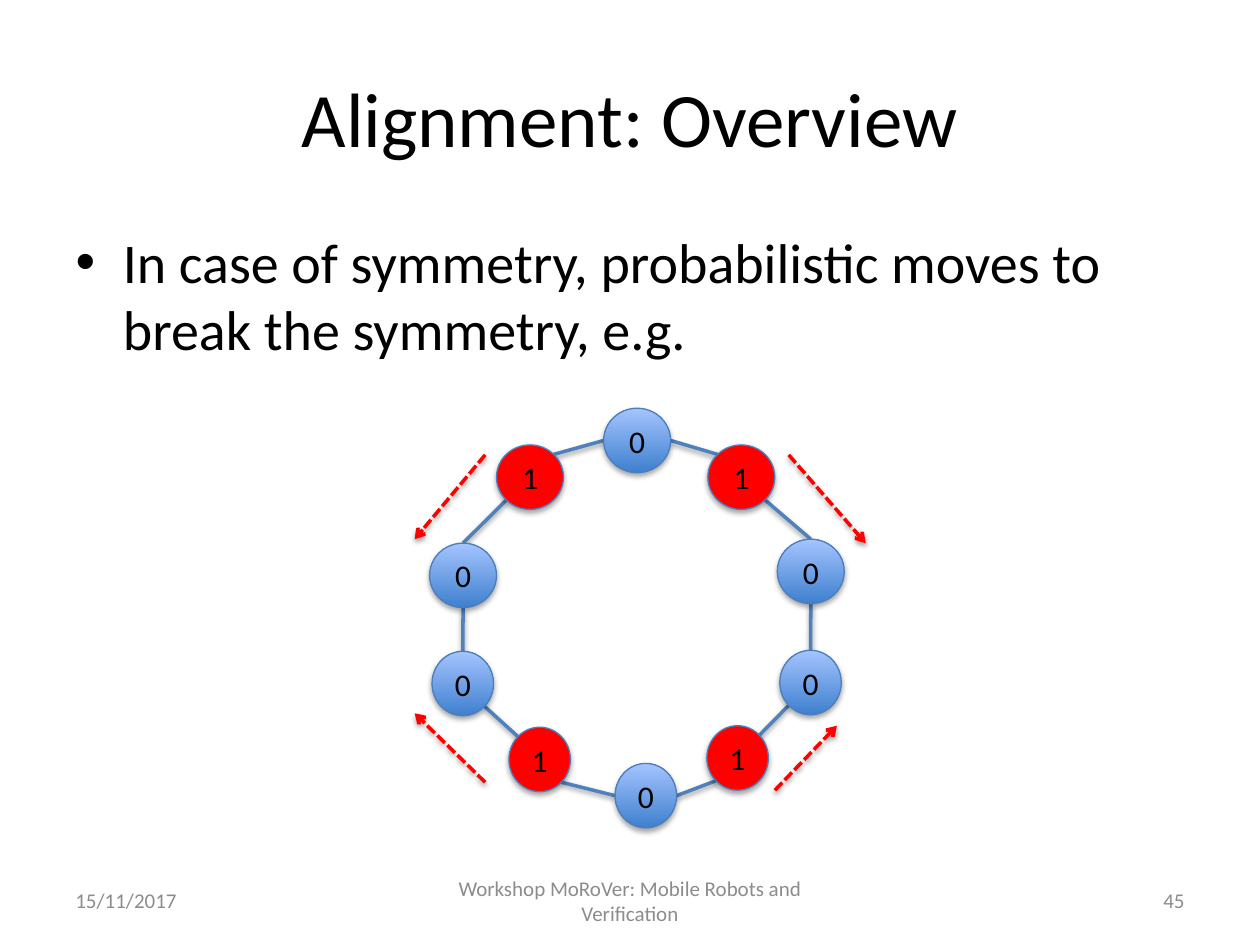
from dataclasses import dataclass
from math import sqrt

from lxml.etree import SubElement
from pptx import Presentation
from pptx.dml.color import RGBColor
from pptx.enum.dml import MSO_LINE
from pptx.enum.shapes import MSO_CONNECTOR, MSO_SHAPE
from pptx.enum.text import MSO_ANCHOR, PP_ALIGN
from pptx.oxml.ns import qn
from pptx.util import Cm, Pt


@dataclass(frozen=True)
class Theme:
    """Colours, font and type sizes of the slide."""
    font: str = "Calibri"
    ink: str = "000000"
    muted: str = "8C8C8C"
    robot: str = "FF0000"
    node_dark: str = "3F80CE"
    node_light: str = "A4C4FF"
    node_line: str = "4B7EBC"
    edge: str = "4F81BD"
    title: int = 44
    body: int = 32
    label: int = 18
    footer: int = 12


THEME = Theme()
NODE_HEIGHT = 1.3
WIDE, NARROW = 1.35, 1.24
D = sqrt(0.5)
SITES = {"N": (0, -1), "NE": (D, -D), "E": (1, 0), "SE": (D, D),
         "S": (0, 1), "SW": (-D, D), "W": (-1, 0), "NW": (-D, -D)}

# Clockwise: left, top, width, label, entering site, leaving site
RING = [
    (12.17, 8.23, WIDE, "0", "W", "E"),
    (14.27, 8.97, WIDE, "1", "NW", "SE"),
    (15.67, 10.87, WIDE, "0", "N", "S"),
    (15.72, 13.11, NARROW, "0", "N", "SW"),
    (14.25, 14.63, NARROW, "1", "NE", "SW"),
    (12.4, 15.39, NARROW, "0", "E", "W"),
    (10.26, 14.66, NARROW, "1", "SE", "NW"),
    (8.71, 13.13, NARROW, "0", "SE", "N"),
    (8.66, 10.95, WIDE, "0", "S", "N"),
    (10.01, 8.97, WIDE, "1", "SW", "NE"),
]
MOVES = [
    ((15.9, 9.17), (17.45, 10.95)),
    ((15.62, 15.93), (16.87, 14.63)),
    ((9.78, 15.77), (8.36, 14.38)),
    ((9.78, 9.17), (8.36, 10.87)),
]
FOOTERS = [
    (1.27, 5.93, "15/11/2017", PP_ALIGN.LEFT),
    (8.68, 8.04, "Workshop MoRoVer: Mobile Robots and Verification", PP_ALIGN.CENTER),
    (18.2, 5.93, "45", PP_ALIGN.RIGHT),
]


def rgb(value):
    """Turn a hex string into a colour."""
    return RGBColor.from_string(value)


def write(sp, text, size, color, align, anchor):
    """Set and format the single paragraph of a shape."""
    tf = sp.text_frame
    tf.text = text
    tf.word_wrap = True
    tf.vertical_anchor = anchor
    p = tf.paragraphs[0]
    p.alignment = align
    font = p.runs[0].font
    font.name, font.size = THEME.font, Pt(size)
    font.color.rgb = rgb(color)


def place(sp, left, top, width, height):
    """Move and size a shape, in centimetres."""
    sp.left, sp.top, sp.width, sp.height = map(Cm, (left, top, width, height))


def add_shadow(sp, distance, opacity):
    """Give a shape a soft shadow straight below it."""
    effects = SubElement(sp._element.spPr, qn("a:effectLst"))
    shadow = SubElement(effects, qn("a:outerShdw"), blurRad=str(Pt(3.1)),
                        dist=str(Pt(distance)), dir="5400000", rotWithShape="0")
    color = SubElement(shadow, qn("a:srgbClr"), val=THEME.ink)
    SubElement(color, qn("a:alpha"), val=str(opacity * 1000))


def add_line(s, start, end, color, arrow=False):
    """Draw an edge, or a dashed arrow."""
    sp = s.shapes.add_connector(MSO_CONNECTOR.STRAIGHT, *map(Cm, start + end))
    sp.line.color.rgb = rgb(color)
    sp.line.width = Pt(2)
    if arrow:
        sp.line.dash_style = MSO_LINE.SQUARE_DOT
        SubElement(sp.line._get_or_add_ln(), qn("a:tailEnd"), type="arrow")
    add_shadow(sp, 1.6, 38)


def add_node(s, left, top, width, label):
    """Draw a ring node, red when it holds a robot."""
    sp = s.shapes.add_shape(MSO_SHAPE.OVAL, *map(Cm, (left, top, width, NODE_HEIGHT)))
    if label == "1":
        sp.fill.solid()
        sp.fill.fore_color.rgb = rgb(THEME.robot)
    else:
        sp.fill.gradient()
        sp.fill.gradient_angle = 90
        for stop, color in zip(sp.fill.gradient_stops, (THEME.node_dark, THEME.node_light)):
            stop.color.rgb = rgb(color)
    sp.line.color.rgb = rgb(THEME.node_line)
    sp.line.width = Pt(0.75)
    add_shadow(sp, 1.8, 35)
    write(sp, label, THEME.label, THEME.ink, PP_ALIGN.CENTER, MSO_ANCHOR.MIDDLE)


def site_point(node, site):
    """Find a connection site on the outline of a node."""
    left, top, width = node[:3]
    dx, dy = SITES[site]
    return left + width / 2 * (1 + dx), top + NODE_HEIGHT / 2 * (1 + dy)


def add_ring(s):
    """Draw all nodes and the edge from each to the next."""
    for node, following in zip(RING, RING[1:] + RING[:1]):
        add_line(s, site_point(node, node[5]), site_point(following, following[4]), THEME.edge)
    for node in RING:
        add_node(s, *node[:4])


def add_footer(s, left, width, text, align):
    """Add one grey footer text."""
    sp = s.shapes.add_textbox(*map(Cm, (left, 17.65, width, 1.01)))
    write(sp, text, THEME.footer, THEME.muted, align, MSO_ANCHOR.MIDDLE)


def main():
    """Build and save the slide."""
    prs = Presentation()
    prs.slide_width, prs.slide_height = Cm(25.4), Cm(19.05)
    s = prs.slides.add_slide(prs.slide_layouts[1])
    title, body = s.shapes.title, s.placeholders[1]
    place(title, 1.27, 0.76, 22.86, 3.18)
    write(title, "Alignment: Overview", THEME.title, THEME.ink,
          PP_ALIGN.CENTER, MSO_ANCHOR.MIDDLE)
    place(body, 1.27, 4.45, 22.86, 12.57)
    write(body, "In case of symmetry, probabilistic moves to break the symmetry, e.g.",
          THEME.body, THEME.ink, PP_ALIGN.LEFT, MSO_ANCHOR.TOP)
    for footer in FOOTERS:
        add_footer(s, *footer)
    add_ring(s)
    for start, end in MOVES:
        add_line(s, start, end, THEME.robot, arrow=True)
    prs.save("out.pptx")


if __name__ == "__main__":
    main()
